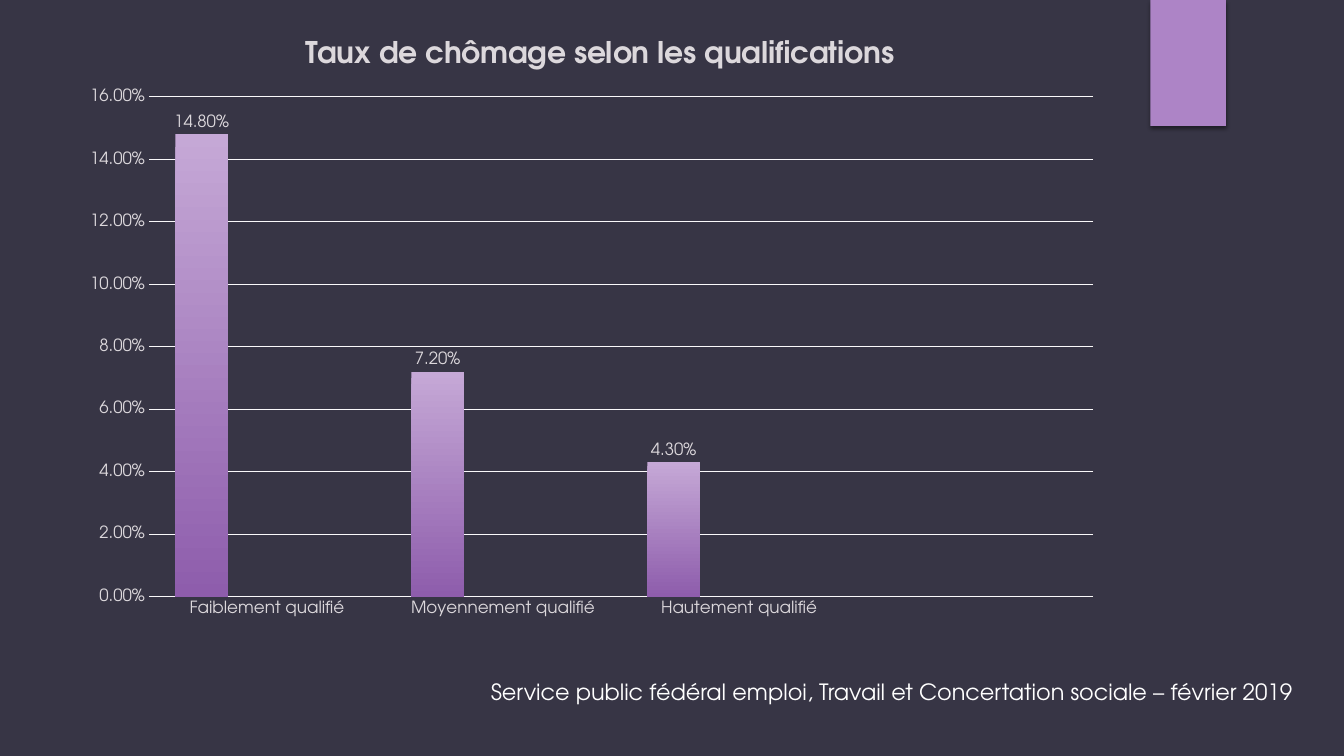
from dataclasses import dataclass

from lxml.etree import SubElement
from pptx import Presentation
from pptx.chart.data import CategoryChartData
from pptx.dml.color import RGBColor
from pptx.enum.chart import XL_CHART_TYPE as ChartType
from pptx.enum.chart import XL_LABEL_POSITION as LabelPosition
from pptx.enum.chart import XL_TICK_MARK as TickMark
from pptx.enum.shapes import MSO_SHAPE as Preset
from pptx.oxml.ns import qn
from pptx.util import Inches, Pt


@dataclass(frozen=True)
class Theme:
    """Colours, font and type sizes of the slide."""
    font: str = "TeX Gyre Adventor"
    backdrop: str = "000000"
    panel: str = "373545"
    accent: str = "AD84C6"
    text: str = "FFFFFF"
    chart_text: str = "DCD8DC"
    rule: str = "FAF9FA"
    shadow: str = "000000"
    gradients: tuple = (("C5A8D6", "8E5DAC"), ("AAA8D7", "605CAD"), ("7A8BAB", "4B5C7C"))
    title_size: float = 21.3
    caption_size: int = 16
    label_size: int = 12
    rule_width: float = 0.75


THEME = Theme()
CATEGORIES = ("Faiblement qualifié", "Moyennement qualifié", "Hautement qualifié", "")
RATES = (0.148, 0.072, 0.043, None)
PERCENT = "0.00%"


def apply_format(target, formats):
    """Set each attribute of the target from a dict of format values."""
    for name, value in formats.items():
        setattr(target, name, value)


def format_font(font, size, colour, bold=False):
    """Give a font the theme typeface, a size and a colour."""
    apply_format(font, {"name": THEME.font, "size": Pt(size), "bold": bold})
    font.color.rgb = RGBColor.from_string(colour)


def format_rule(line):
    """Style an axis line or a gridline."""
    line.width = Pt(THEME.rule_width)
    line.color.rgb = RGBColor.from_string(THEME.rule)


def add_block(slide, colour, left, top, width, height):
    """Add a flat rectangle measured in inches."""
    lengths = map(Inches, (left, top, width, height))
    shape = slide.shapes.add_shape(Preset.RECTANGLE, *lengths)
    shape.shadow.inherit = False
    shape.fill.solid()
    shape.fill.fore_color.rgb = RGBColor.from_string(colour)
    shape.line.fill.background()
    return shape


def add_shadow(shape):
    """Add a soft shadow below a shape."""
    effects = shape.element.spPr.find(qn("a:effectLst"))
    shadow = SubElement(effects, qn("a:outerShdw"), blurRad=str(Pt(3)),
                        dist=str(Pt(2)), dir="5400000", rotWithShape="0")
    colour = SubElement(shadow, qn("a:srgbClr"), val=THEME.shadow)
    SubElement(colour, qn("a:alpha"), val="45000")


def place_chart_part(element, index, values):
    """Place a chart part by fractions of the chart area."""
    for old_layout in element.findall(qn("c:layout")):
        element.remove(old_layout)
    layout = SubElement(element, qn("c:layout"))
    element.insert(index, layout)
    manual = SubElement(layout, qn("c:manualLayout"))
    for name, value in values.items():
        SubElement(manual, qn(f"c:{name}"), val=str(value))


def format_series(series, gradient):
    """Fill the columns with a gradient and label them with their values."""
    fill = series.format.fill
    fill.gradient()
    fill.gradient_angle = 270
    for stop, position, colour in zip(fill.gradient_stops, (0, 1), gradient):
        stop.position = position
        stop.color.rgb = RGBColor.from_string(colour)
    labels = series.data_labels
    apply_format(labels, {"show_value": True, "position": LabelPosition.OUTSIDE_END,
                          "number_format": PERCENT, "number_format_is_linked": False})
    format_font(labels.font, THEME.label_size, THEME.chart_text)


def format_axes(chart):
    """Style both axes and the gridlines."""
    no_ticks = {"major_tick_mark": TickMark.NONE, "minor_tick_mark": TickMark.NONE}
    for axis in (chart.category_axis, chart.value_axis):
        apply_format(axis, no_ticks)
        format_font(axis.tick_labels.font, THEME.label_size, THEME.chart_text)
    format_rule(chart.category_axis.format.line)
    value_axis = chart.value_axis
    apply_format(value_axis, {"minimum_scale": 0, "maximum_scale": 0.16, "major_unit": 0.02})
    apply_format(value_axis.tick_labels,
                 {"number_format": PERCENT, "number_format_is_linked": False})
    value_axis.format.line.fill.background()
    format_rule(value_axis.major_gridlines.format.line)


def add_chart_title(chart, text):
    """Add a bold title at the top of the chart."""
    frame = chart.chart_title.text_frame
    frame.text = text
    format_font(frame.paragraphs[0].runs[0].font, THEME.title_size, THEME.chart_text, True)
    place_chart_part(chart.chart_title._element, 1,
                     {"xMode": "edge", "yMode": "edge", "x": 0.22, "y": 0.03})


def add_rate_chart(slide):
    """Add the column chart of unemployment rates."""
    data = CategoryChartData(number_format=PERCENT)
    data.categories = CATEGORIES
    empty = (None,) * len(CATEGORIES)
    for number, values in enumerate((RATES, empty, empty), start=1):
        data.add_series(f"Series {number}", values)
    lengths = map(Inches, (0.69, 0.14, 10.37, 6.09))
    chart = slide.shapes.add_chart(ChartType.COLUMN_CLUSTERED, *lengths, data).chart
    chart.has_legend = False
    format_font(chart.font, 10, THEME.text)
    add_chart_title(chart, "Taux de chômage selon les qualifications")
    format_axes(chart)
    plot = chart.plots[0]
    apply_format(plot, {"gap_width": 100, "overlap": -24, "vary_by_categories": False})
    for series, gradient in zip(plot.series, THEME.gradients):
        format_series(series, gradient)
    place_chart_part(chart._chartSpace.chart.plotArea, 0,
                     {"layoutTarget": "inner", "xMode": "edge", "yMode": "edge",
                      "x": 0.076, "y": 0.135, "w": 0.903, "h": 0.814})


def add_caption(slide, text, left, top, width, height):
    """Add a line of text measured in inches."""
    frame = slide.shapes.add_textbox(*map(Inches, (left, top, width, height))).text_frame
    frame.word_wrap = True
    frame.text = text
    format_font(frame.paragraphs[0].runs[0].font, THEME.caption_size, THEME.text)


def main():
    """Build the slide and save it."""
    presentation = Presentation()
    apply_format(presentation, {"slide_width": Inches(13.33), "slide_height": Inches(7.5)})
    slide = presentation.slides.add_slide(presentation.slide_layouts[6])
    slide.background.fill.solid()
    slide.background.fill.fore_color.rgb = RGBColor.from_string(THEME.backdrop)
    add_block(slide, THEME.panel, 0, 0, 13.33, 7.5)
    add_shadow(add_block(slide, THEME.accent, 11.41, 0, 0.75, 1.25))
    add_rate_chart(slide)
    add_caption(slide, "Service public fédéral emploi, Travail et Concertation sociale"
                " – février 2019", 4.77, 6.68, 8.3, 0.67)
    presentation.save("out.pptx")


if __name__ == "__main__":
    main()
